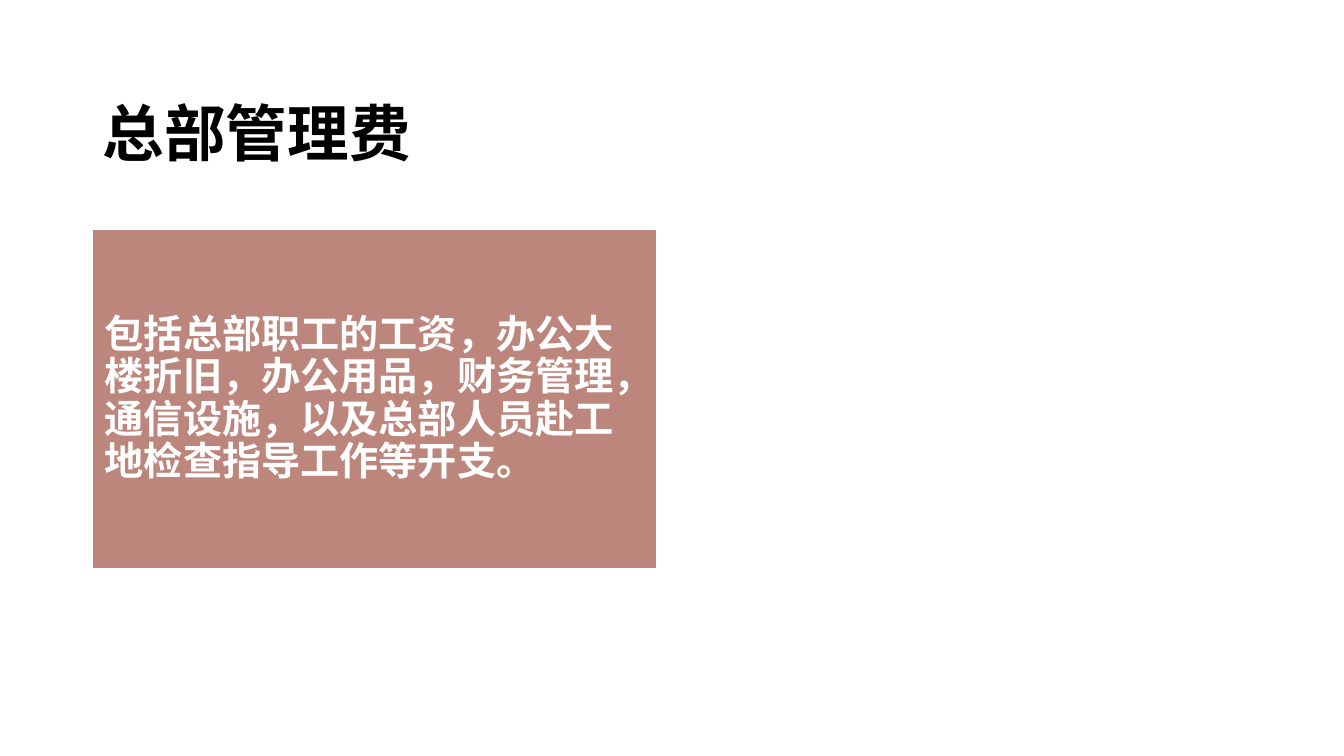
from dataclasses import dataclass
from typing import Optional

from lxml import etree
from pptx import Presentation
from pptx.dml.color import RGBColor
from pptx.enum.shapes import MSO_SHAPE
from pptx.enum.text import MSO_ANCHOR, PP_ALIGN
from pptx.oxml.ns import qn
from pptx.slide import Slide
from pptx.util import Inches, Pt

RECTANGLE = MSO_SHAPE.RECTANGLE
MIDDLE = MSO_ANCHOR.MIDDLE
LEFT = PP_ALIGN.LEFT

BLACK = RGBColor(0x00, 0x00, 0x00)
WHITE = RGBColor(0xFF, 0xFF, 0xFF)
CLAY = RGBColor(0xBC, 0x86, 0x7C)

SLIDE_WIDTH = Inches(13.33)
SLIDE_HEIGHT = Inches(7.5)
COLUMN = SLIDE_WIDTH / 100
ROW = SLIDE_HEIGHT / 100
MARGIN_COLUMNS = 6.9
CJK_FONT = "Noto Sans CJK SC"


@dataclass(frozen=True)
class Block:
    text: str
    top: float
    columns: float
    rows: float
    font_name: str
    font_size: int
    color: RGBColor
    paragraph_format: dict
    frame_format: dict
    fill: Optional[RGBColor] = None


def draw_block(slide: Slide, block: Block) -> None:
    panel = slide.shapes.add_shape(
        RECTANGLE,
        round(MARGIN_COLUMNS * COLUMN),
        round(block.top * ROW),
        round(block.columns * COLUMN),
        round(block.rows * ROW),
    )
    panel.shadow.inherit = False
    if block.fill is None:
        panel.fill.background()
        panel.line.fill.background()
    else:
        panel.fill.solid()
        panel.fill.fore_color.rgb = block.fill
        panel.line.color.rgb = WHITE
        panel.line.width = Pt(1)

    frame = panel.text_frame
    for attribute, value in block.frame_format.items():
        setattr(frame, attribute, value)
    paragraph = frame.paragraphs[0]
    for attribute, value in block.paragraph_format.items():
        setattr(paragraph, attribute, value)

    wording = paragraph.add_run()
    wording.text = block.text
    font_format = {"name": block.font_name, "size": Pt(block.font_size), "bold": True}
    for attribute, value in font_format.items():
        setattr(wording.font, attribute, value)
    wording.font.color.rgb = block.color
    properties = wording.font._element
    east_asian = etree.Element(qn("a:ea"), typeface=CJK_FONT)
    properties.find(qn("a:latin")).addnext(east_asian)


FRAME_FORMAT = {"word_wrap": True, "vertical_anchor": MIDDLE}
PADDING = {
    f"margin_{side}": Inches(0.12) for side in ("left", "top", "right", "bottom")
}

BLOCKS = (
    Block(
        text="总部管理费",
        top=5.33,
        columns=86.25,
        rows=19.33,
        font_name="Times New Roman",
        font_size=44,
        color=BLACK,
        paragraph_format={"alignment": LEFT, "line_spacing": 1.5},
        frame_format=FRAME_FORMAT,
    ),
    Block(
        text="包括总部职工的工资，办公大楼折旧，办公用品，财务管理，"
        "通信设施，以及总部人员赴工地检查指导工作等开支。",
        top=30.4,
        columns=42,
        rows=44.8,
        font_name=CJK_FONT,
        font_size=28,
        color=WHITE,
        paragraph_format={
            "alignment": LEFT,
            "line_spacing": 0.9,
            "space_after": Pt(10),
        },
        frame_format=FRAME_FORMAT | PADDING,
        fill=CLAY,
    ),
)


def main() -> None:
    presentation = Presentation()
    presentation.slide_width = SLIDE_WIDTH
    presentation.slide_height = SLIDE_HEIGHT
    slide = presentation.slides.add_slide(presentation.slide_layouts[6])
    for block in BLOCKS:
        draw_block(slide, block)
    presentation.save("out.pptx")


if __name__ == "__main__":
    main()
